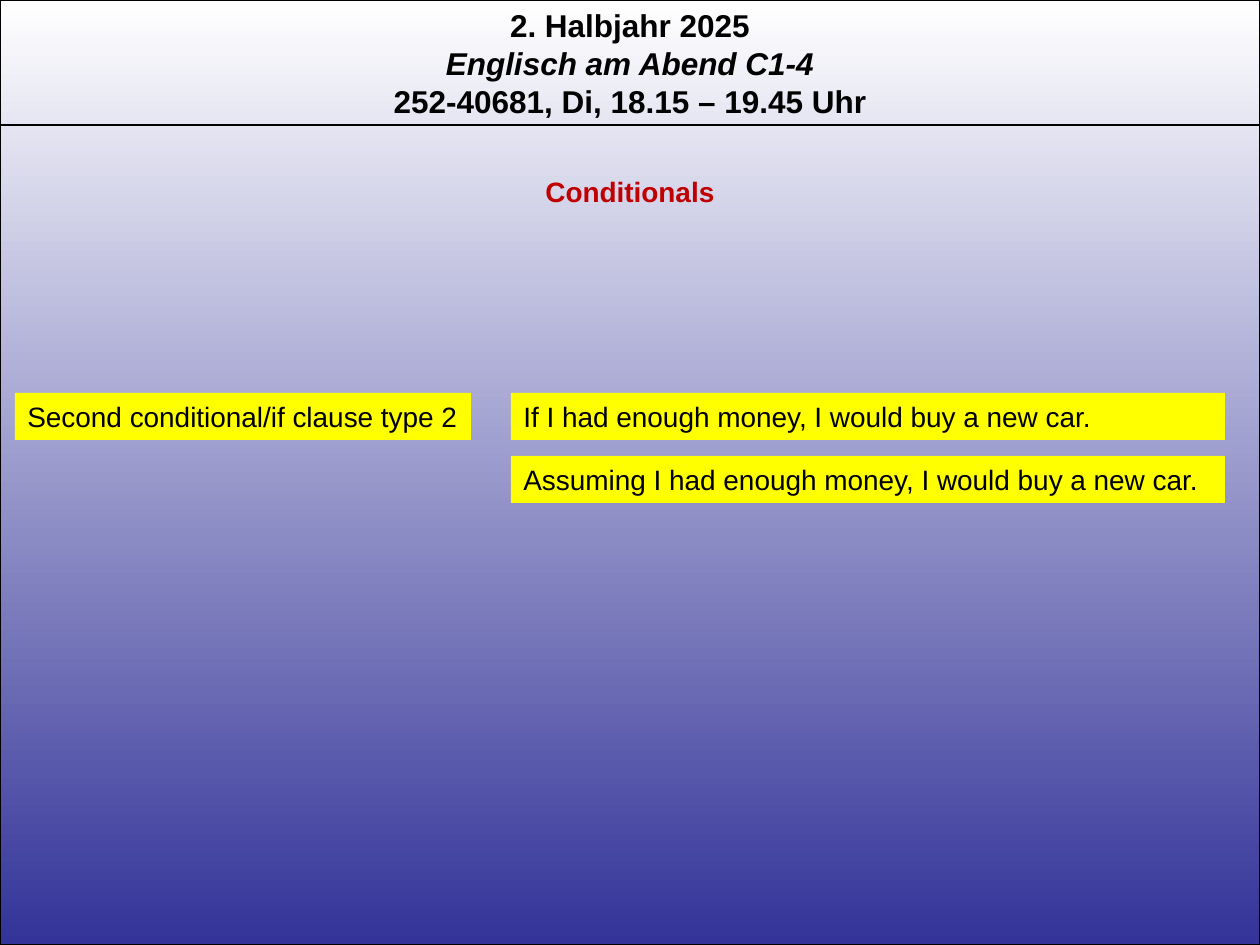
from dataclasses import dataclass
from typing import Optional

from lxml import etree
from pptx import Presentation
from pptx.dml.color import RGBColor
from pptx.enum.shapes import MSO_CONNECTOR, MSO_SHAPE
from pptx.enum.text import MSO_ANCHOR, MSO_AUTO_SIZE, PP_ALIGN
from pptx.oxml.ns import qn
from pptx.slide import Slide
from pptx.util import Emu, Pt

RECTANGLE = MSO_SHAPE.RECTANGLE
STRAIGHT = MSO_CONNECTOR.STRAIGHT
TOP = MSO_ANCHOR.TOP
FIT_SHAPE = MSO_AUTO_SIZE.SHAPE_TO_FIT_TEXT
LEFT = PP_ALIGN.LEFT
CENTER = PP_ALIGN.CENTER

PX_PER_INCH = 126
EMU_PER_INCH = 914400
SLIDE_WIDTH = 1260
SLIDE_HEIGHT = 945
HEADER_RULE_TOP = 125
LABEL_HEIGHT = 47
FIRST_ROW_TOP = 393
ROW_PITCH = 63
CLAUSE_LEFT = 15
CLAUSE_WIDTH = 456
EXAMPLE_LEFT = 511
EXAMPLE_WIDTH = 714


@dataclass(frozen=True)
class Theme:
    font: str = "Arial"
    text: RGBColor = RGBColor(0x00, 0x00, 0x00)
    topic: RGBColor = RGBColor(0xC0, 0x00, 0x00)
    highlight: RGBColor = RGBColor(0xFF, 0xFF, 0x00)
    gradient_top: RGBColor = RGBColor(0xFF, 0xFF, 0xFF)
    gradient_bottom: RGBColor = RGBColor(0x33, 0x33, 0x99)
    header_size: Pt = Pt(18)
    body_size: Pt = Pt(16)
    line_width: Pt = Pt(0.75)


THEME = Theme()


@dataclass(frozen=True)
class TextLine:
    text: str
    size: Pt = THEME.body_size
    color: RGBColor = THEME.text
    bold: bool = False
    italic: bool = False


@dataclass(frozen=True)
class TextBlock:
    left: int
    top: int
    width: int
    height: int
    lines: tuple[TextLine, ...]
    alignment: PP_ALIGN = LEFT
    fill: Optional[RGBColor] = None


def px(length: int) -> Emu:
    return Emu(round(length * EMU_PER_INCH / PX_PER_INCH))


def header_line(text: str, italic: bool = False) -> TextLine:
    return TextLine(text, size=THEME.header_size, bold=True, italic=italic)


def example(row: int, text: str) -> TextBlock:
    top = FIRST_ROW_TOP + row * ROW_PITCH
    return TextBlock(EXAMPLE_LEFT, top, EXAMPLE_WIDTH, LABEL_HEIGHT,
                     (TextLine(text),), fill=THEME.highlight)


BLOCKS = (
    TextBlock(0, 0, SLIDE_WIDTH, 127, (
        header_line("2. Halbjahr 2025"),
        header_line("Englisch am Abend C1-4", italic=True),
        header_line("252-40681, Di, 18.15 – 19.45 Uhr"),
    ), CENTER),
    TextBlock(0, 168, SLIDE_WIDTH, LABEL_HEIGHT,
              (TextLine("Conditionals", color=THEME.topic, bold=True),), CENTER),
    TextBlock(CLAUSE_LEFT, FIRST_ROW_TOP, CLAUSE_WIDTH, LABEL_HEIGHT,
              (TextLine("Second conditional/if clause type 2"),),
              fill=THEME.highlight),
    example(0, "If I had enough money, I would buy a new car."),
    example(1, "Assuming I had enough money, I would buy a new car."),
)


def draw_background(slide: Slide) -> None:
    shape = slide.shapes.add_shape(
        RECTANGLE, 0, 0, px(SLIDE_WIDTH), px(SLIDE_HEIGHT))
    shape.shadow.inherit = False
    shape.fill.gradient()
    shape.fill.gradient_angle = 270
    colors = (THEME.gradient_top, THEME.gradient_bottom)
    for position, (stop, color) in enumerate(zip(shape.fill.gradient_stops, colors)):
        stop.position = position
        stop.color.rgb = color
    shape.line.color.rgb = THEME.text
    shape.line.width = THEME.line_width


def draw_header_rule(slide: Slide) -> None:
    connector = slide.shapes.add_connector(
        STRAIGHT, 0, px(HEADER_RULE_TOP), px(SLIDE_WIDTH), px(HEADER_RULE_TOP))
    connector.line.color.rgb = THEME.text
    connector.line.width = THEME.line_width
    etree.SubElement(connector._element.spPr, qn("a:effectLst"))


def draw_block(slide: Slide, block: TextBlock) -> None:
    bounds = [px(length) for length in
              (block.left, block.top, block.width, block.height)]
    if block.fill is None:
        shape = slide.shapes.add_textbox(*bounds)
    else:
        shape = slide.shapes.add_shape(RECTANGLE, *bounds)
        shape.shadow.inherit = False
        shape.fill.solid()
        shape.fill.fore_color.rgb = block.fill
        shape.line.fill.background()
    frame = shape.text_frame
    frame.word_wrap = True
    frame.auto_size = FIT_SHAPE
    frame.vertical_anchor = TOP
    for index, line in enumerate(block.lines):
        paragraph = frame.add_paragraph() if index else frame.paragraphs[0]
        paragraph.alignment = block.alignment
        run = paragraph.add_run()
        run.text = line.text
        run.font.name = THEME.font
        run.font.size = line.size
        run.font.bold = line.bold
        run.font.italic = line.italic
        run.font.color.rgb = line.color


def main() -> None:
    presentation = Presentation()
    presentation.slide_width = px(SLIDE_WIDTH)
    presentation.slide_height = px(SLIDE_HEIGHT)
    slide = presentation.slides.add_slide(presentation.slide_layouts[6])
    draw_background(slide)
    draw_header_rule(slide)
    for block in BLOCKS:
        draw_block(slide, block)
    presentation.save("out.pptx")


if __name__ == "__main__":
    main()
